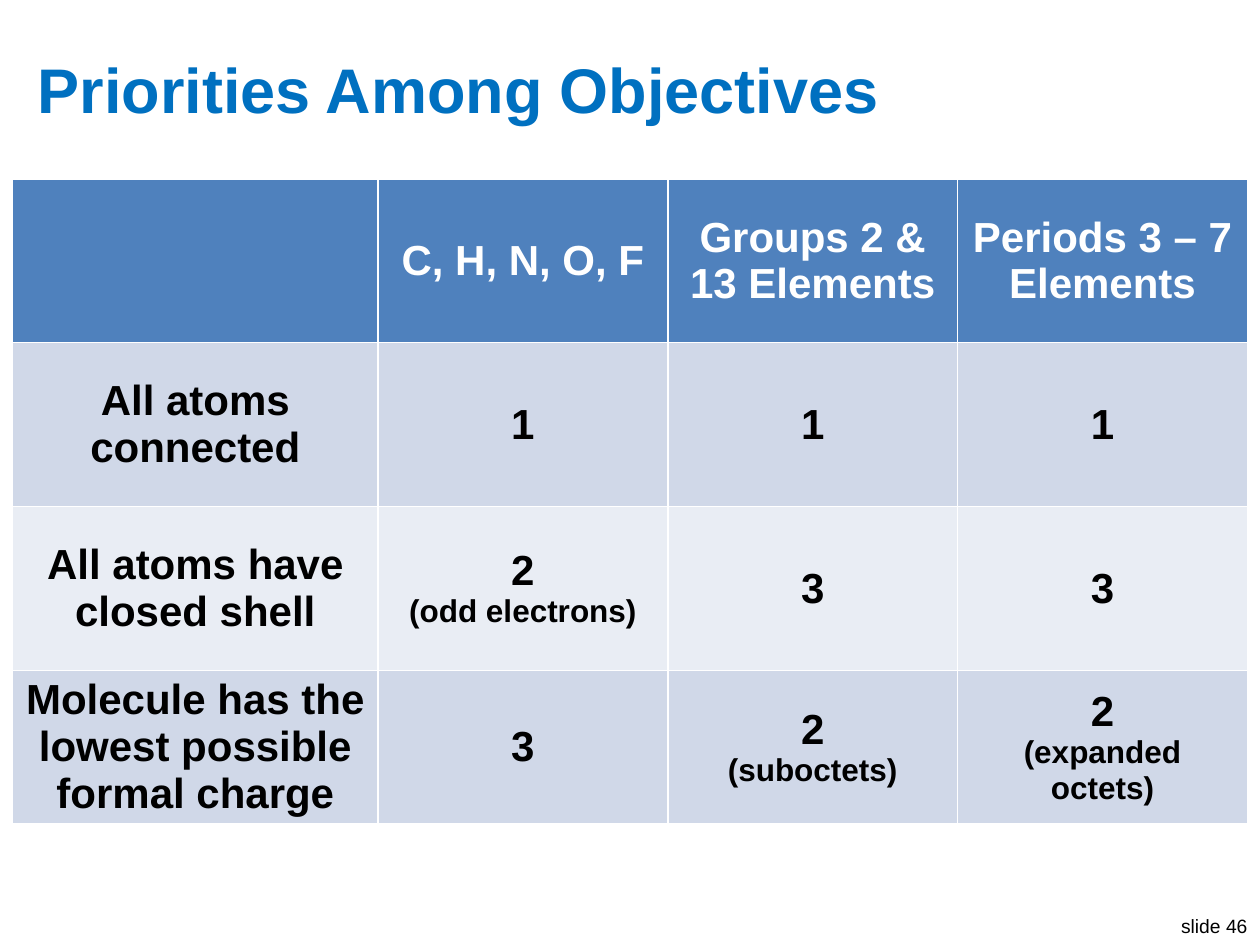
from pptx import Presentation
from pptx.dml.color import RGBColor
from pptx.enum.text import MSO_ANCHOR, PP_ALIGN
from pptx.util import Inches, Pt

MIDDLE = MSO_ANCHOR.MIDDLE
LEFT, CENTER, RIGHT = PP_ALIGN.LEFT, PP_ALIGN.CENTER, PP_ALIGN.RIGHT


def rgb(value):
    return RGBColor.from_string(value)


def style(p, size, color, bold, align):
    p.alignment = align
    p.font.name = "Arial"
    p.font.size = Pt(size)
    p.font.bold = bold
    p.font.color.rgb = rgb(color)


prs = Presentation()
prs.slide_width, prs.slide_height = Inches(10), Inches(7.5)
s = prs.slides.add_slide(prs.slide_layouts[5])

title = s.shapes.title
title.left, title.top = Inches(0.2), Inches(0.3)
title.width, title.height = Inches(9.6), Inches(0.8)
title.text_frame.text = "Priorities Among Objectives"
title.text_frame.vertical_anchor = MIDDLE
style(title.text_frame.paragraphs[0], 36, "0070C0", True, LEFT)

rows = [
    ["", "C, H, N, O, F", "Groups 2 & 13 Elements", "Periods 3 – 7 Elements"],
    ["All atoms connected", "1", "1", "1"],
    ["All atoms have closed shell", "2\n(odd electrons)", "3", "3"],
    ["Molecule has the lowest possible formal charge", "3",
     "2\n(suboctets)", "2\n(expanded octets)"],
]
col_widths = [2.9, 2.3, 2.3, 2.3]
row_heights = [1.3, 1.3, 1.3, 1.22]
row_fills = ["4F81BD", "D0D8E8", "E9EDF4", "D0D8E8"]

table = s.shapes.add_table(
    len(rows), len(col_widths), Inches(0.1), Inches(1.42),
    Inches(sum(col_widths)), Inches(sum(row_heights))).table
for column, width in zip(table.columns, col_widths):
    column.width = Inches(width)
for i, texts in enumerate(rows):
    table.rows[i].height = Inches(row_heights[i])
    color = "FFFFFF" if i == 0 else "000000"
    for j, text in enumerate(texts):
        cell = table.cell(i, j)
        cell.fill.solid()
        cell.fill.fore_color.rgb = rgb(row_fills[i])
        cell.vertical_anchor = MIDDLE
        cell.text = text
        for p in cell.text_frame.paragraphs:
            style(p, 18 if p.text.startswith("(") else 24, color, True, CENTER)

box = s.shapes.add_textbox(Inches(9.25), Inches(7.21), Inches(0.75), Inches(0.29))
tf = box.text_frame
tf.word_wrap = False
tf.text = "slide 46"
style(tf.paragraphs[0], 11, "000000", False, RIGHT)

prs.save("out.pptx")
